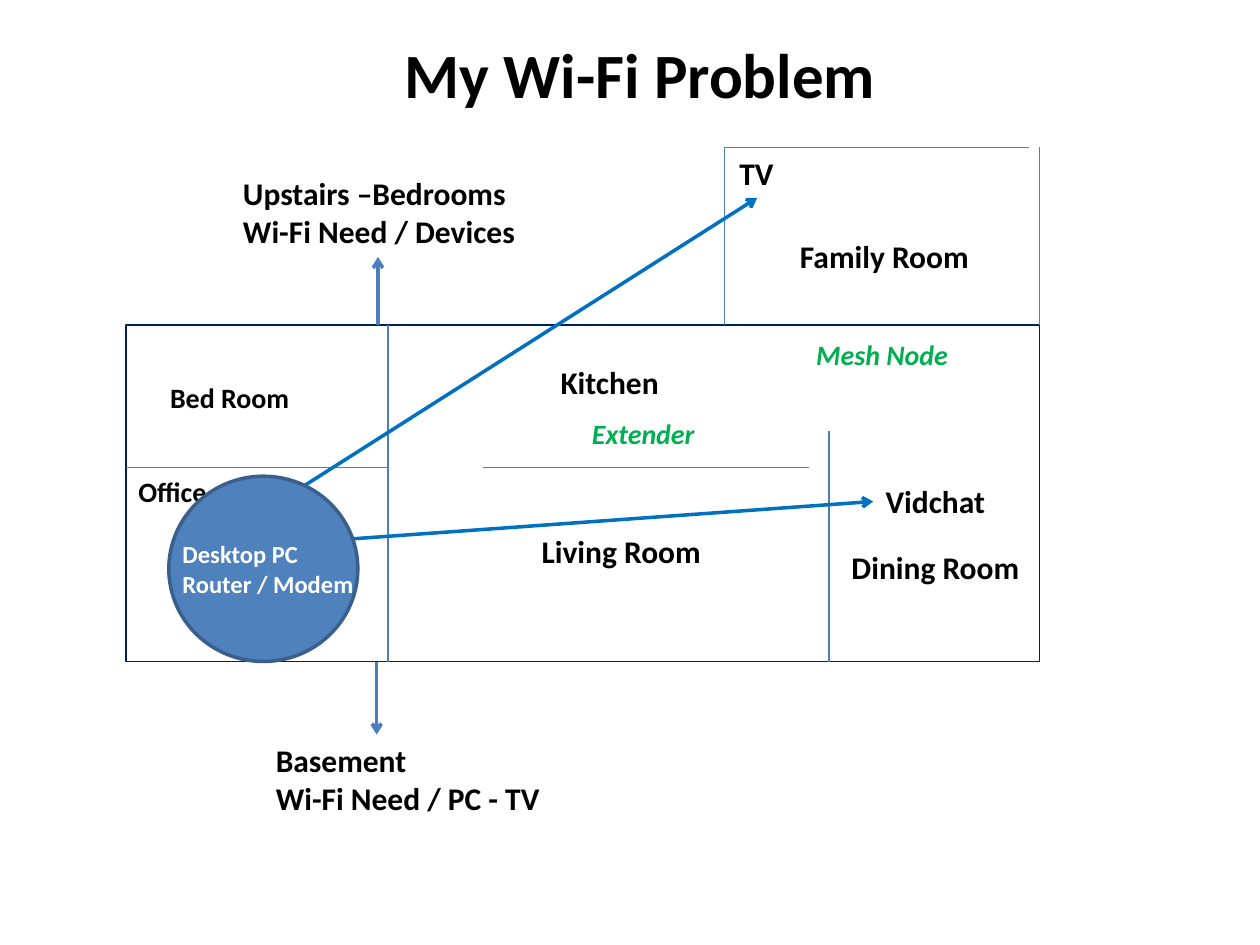
from dataclasses import dataclass

from lxml import etree
from pptx import Presentation
from pptx.dml.color import RGBColor
from pptx.enum.shapes import MSO_CONNECTOR, MSO_SHAPE
from pptx.enum.text import MSO_ANCHOR, PP_ALIGN
from pptx.oxml.ns import qn
from pptx.util import Inches, Pt

STRAIGHT = MSO_CONNECTOR.STRAIGHT
RECTANGLE, OVAL = MSO_SHAPE.RECTANGLE, MSO_SHAPE.OVAL
TOP, MIDDLE = MSO_ANCHOR.TOP, MSO_ANCHOR.MIDDLE
LEFT, CENTER = PP_ALIGN.LEFT, PP_ALIGN.CENTER


@dataclass(frozen=True)
class Theme:
    """Font, colours, type sizes and line widths of the slide."""
    font: str = "Calibri"
    ink: str = "000000"
    white: str = "FFFFFF"
    green: str = "00B050"
    outline: str = "002060"
    wall: str = "4B7EBC"
    signal: str = "0070C0"
    hub: str = "4F81BD"
    hub_edge: str = "3A5F8C"
    title: int = 36
    large: int = 18
    medium: int = 16
    small: int = 14
    thin: float = 0.75
    thick: float = 2


THEME = Theme()
HOUSE_LEFT, HOUSE_TOP, HOUSE_RIGHT, HOUSE_BOTTOM = 1, 2.58, 8.25, 5.25
BEDROOM_RIGHT, MIDDLE_WALL, FAMILY_LEFT, FAMILY_TOP = 3.08, 3.71, 5.75, 1.17

WALLS = [
    ((BEDROOM_RIGHT, HOUSE_TOP), (BEDROOM_RIGHT, HOUSE_BOTTOM)),
    ((BEDROOM_RIGHT, MIDDLE_WALL), (HOUSE_LEFT, MIDDLE_WALL)),
    ((3.83, MIDDLE_WALL), (6.42, MIDDLE_WALL)),
    ((FAMILY_LEFT, HOUSE_TOP), (FAMILY_LEFT, FAMILY_TOP)),
    ((FAMILY_LEFT, FAMILY_TOP), (8.17, FAMILY_TOP)),
    ((HOUSE_RIGHT, HOUSE_TOP), (HOUSE_RIGHT, FAMILY_TOP)),
    ((6.58, 3.42), (6.58, HOUSE_BOTTOM)),
]
ARROWS = [
    ((3, HOUSE_TOP), (3, 2.04), THEME.wall),
    ((2.99, HOUSE_BOTTOM), (2.99, 5.83), THEME.wall),
    ((1.92, 4.17), (6.01, 1.57), THEME.signal),
    ((2.75, 4.28), (6.93, 3.98), THEME.signal),
]
ROOMS = [
    ("Family Room", (6.25, 1.83, 1.55, 0.4)),
    ("TV", (5.77, 1.17, 0.48, 0.4)),
    ("Living Room", (4.2, 4.17, 1.48, 0.4)),
    ("Dining Room", (6.66, 4.3, 1.54, 0.4)),
    ("Kitchen", (4.35, 2.83, 0.99, 0.4)),
    ("Vidchat", (6.93, 3.78, 1.15, 0.4)),
]
BOOSTERS = [
    ("Extender", (4.6, 3.26, 1.04, 0.37)),
    ("Mesh Node", (6.38, 2.63, 1.27, 0.37)),
]
FLOORS = [
    (["Upstairs –Bedrooms", "Wi-Fi Need / Devices"], (1.83, 1.33, 2.52, 0.71)),
    (["Basement", "Wi-Fi Need / PC - TV"], (2.09, 5.83, 2.52, 0.71)),
]


def color(value):
    """Turn a hex string into a colour."""
    return RGBColor.from_string(value)


def write_lines(frame, lines, size, ink=THEME.ink, italic=False, align=LEFT):
    """Write one bold run per paragraph."""
    for index, line in enumerate(lines):
        paragraph = frame.add_paragraph() if index else frame.paragraphs[0]
        paragraph.alignment = align
        run = paragraph.add_run()
        run.text = line
        run.font.name = THEME.font
        run.font.size = Pt(size)
        run.font.bold = True
        run.font.italic = italic
        run.font.color.rgb = color(ink)


def add_label(slide, lines, box, size, wrap=True, anchor=TOP, **style):
    """Add a text box holding the given lines."""
    frame = slide.shapes.add_textbox(*map(Inches, box)).text_frame
    frame.word_wrap = wrap
    frame.vertical_anchor = anchor
    write_lines(frame, lines, size, **style)


def add_line(slide, start, end, ink, width):
    """Add a straight line without a shadow."""
    connector = slide.shapes.add_connector(STRAIGHT, *map(Inches, start + end))
    connector.line.color.rgb = color(ink)
    connector.line.width = Pt(width)
    etree.SubElement(connector._element.spPr, qn("a:effectLst"))
    return connector


def add_arrow(slide, start, end, ink):
    """Add a thick line with an open arrowhead at its end."""
    connector = add_line(slide, start, end, ink, THEME.thick)
    etree.SubElement(connector.line._get_or_add_ln(), qn("a:tailEnd"), type="arrow")


def add_outline(slide, kind, box, ink, width, fill=None):
    """Add an outlined shape, filled only when a fill is given."""
    shape = slide.shapes.add_shape(kind, *map(Inches, box))
    shape.shadow.inherit = False
    shape.line.color.rgb = color(ink)
    shape.line.width = Pt(width)
    if fill:
        shape.fill.solid()
        shape.fill.fore_color.rgb = color(fill)
    else:
        shape.fill.background()
    return shape


def add_house(slide):
    """Add the house outline with the bedroom name, and the inner walls."""
    box = (HOUSE_LEFT, HOUSE_TOP, HOUSE_RIGHT - HOUSE_LEFT, HOUSE_BOTTOM - HOUSE_TOP)
    frame = add_outline(slide, RECTANGLE, box, THEME.outline, THEME.thin).text_frame
    frame.vertical_anchor = TOP
    frame.margin_left, frame.margin_top = Inches(0.35), Inches(0.44)
    write_lines(frame, ["Bed Room"], THEME.medium)
    for start, end in WALLS:
        add_line(slide, start, end, THEME.wall, THEME.thin)


def main():
    """Build the slide and save it."""
    presentation = Presentation()
    presentation.slide_width, presentation.slide_height = Inches(10), Inches(7.5)
    slide = presentation.slides.add_slide(presentation.slide_layouts[6])
    add_label(slide, ["My Wi-Fi Problem"], (0.58, 0.17, 9, 0.83), THEME.title,
              anchor=MIDDLE, align=CENTER)
    add_house(slide)
    add_label(slide, ["Office"], (1, 3.72, 0.95, 0.37), THEME.medium)
    for name, box in ROOMS:
        add_label(slide, [name], box, THEME.large, wrap=False)
    for name, box in BOOSTERS:
        add_label(slide, [name], box, THEME.medium, wrap=False, ink=THEME.green, italic=True)
    for lines, box in FLOORS:
        add_label(slide, lines, box, THEME.large)
    for start, end, ink in ARROWS:
        add_arrow(slide, start, end, ink)
    add_outline(slide, OVAL, (1.34, 3.78, 1.5, 1.47), THEME.hub_edge, THEME.thick, THEME.hub)
    add_label(slide, ["Desktop PC", "Router / Modem"], (1.35, 4.23, 1.77, 0.57),
              THEME.small, ink=THEME.white)
    presentation.save("out.pptx")


if __name__ == "__main__":
    main()
